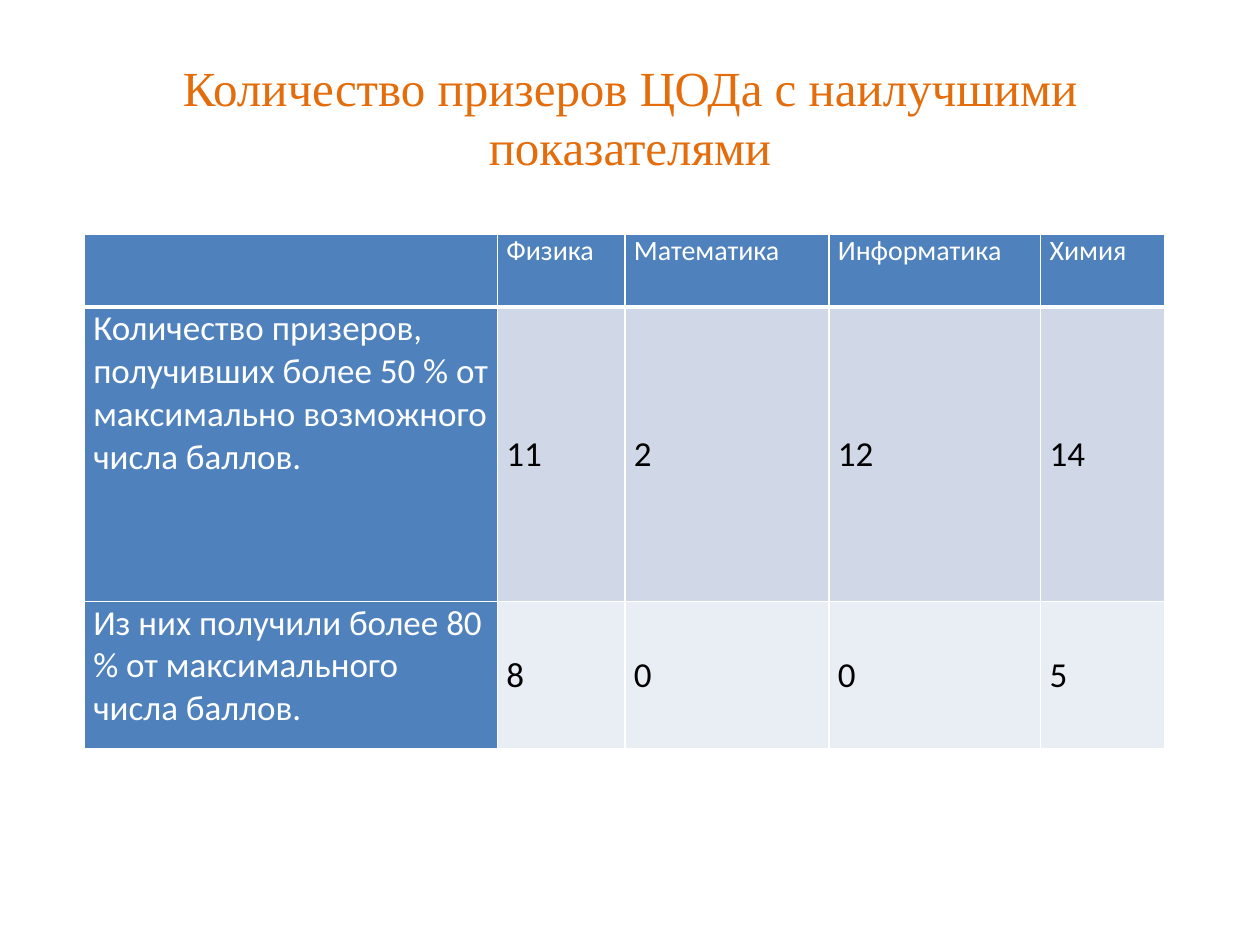
from lxml.etree import SubElement
from pptx import Presentation
from pptx.dml.color import RGBColor
from pptx.enum.text import MSO_ANCHOR as Anchor, PP_ALIGN as Align
from pptx.oxml.ns import qn
from pptx.util import Cm, Pt

ORANGE, BLUE, WHITE, BLACK = "E46C0A", "4F81BD", "FFFFFF", "000000"
BANDS = ["D0D8E8", "E9EDF4"]

COLUMN_WIDTHS = [8.33, 2.57, 4.11, 4.27, 2.51]
ROW_HEIGHTS = [1.47, 5.94, 2.97]
RESULTS = [
    ["", "Физика", "Математика", "Информатика", "Химия"],
    ["Количество призеров, получивших более 50 % от максимально "
     "возможного числа баллов.", "11", "2", "12", "14"],
    ["Из них получили более 80 % от максимального числа баллов.",
     "8", "0", "0", "5"],
]


def color(hex_code):
    return RGBColor.from_string(hex_code)


def write(frame, text, size=20, font="Calibri", fill=BLACK, align=Align.LEFT):
    paragraph = frame.paragraphs[0]
    paragraph.alignment = align
    run = paragraph.add_run()
    run.text = text
    run.font.size = Pt(size)
    run.font.name = font
    run.font.bold = False
    run.font.color.rgb = color(fill)


def add_borders(cell, **widths):
    """Draw white borders; widths are points by side: L, R, T, B."""
    properties = cell._tc.get_or_add_tcPr()
    for side, width in widths.items():
        border = SubElement(properties, qn(f"a:ln{side}"), w=str(Pt(width)))
        paint = SubElement(border, qn("a:solidFill"))
        SubElement(paint, qn("a:srgbClr"), val=WHITE)


def add_title(slide, text):
    title = slide.shapes.title
    title.left, title.top = Cm(1.27), Cm(0.76)
    title.width, title.height = Cm(22.86), Cm(3.18)
    title.text_frame.vertical_anchor = Anchor.MIDDLE
    write(title.text_frame, text, size=28, font="Times New Roman",
          fill=ORANGE, align=Align.CENTER)


def format_cell(cell, text, row, column):
    is_header, is_label = row == 0, column == 0
    # A thick rule separates the header from the body
    add_borders(cell, L=1, R=1, T=3 if row == 1 else 1,
                B=3 if is_header else 1)
    cell.fill.solid()
    on_blue = is_header or is_label
    cell.fill.fore_color.rgb = color(BLUE if on_blue else BANDS[row - 1])
    cell.margin_left = cell.margin_right = Cm(0.18)
    cell.margin_top = cell.margin_bottom = Cm(0)
    cell.vertical_anchor = Anchor.TOP if on_blue else Anchor.MIDDLE
    if text:
        write(cell.text_frame, text, size=16 if is_header else 20,
              fill=WHITE if on_blue else BLACK)


def add_results(slide, rows):
    table = slide.shapes.add_table(
        len(rows), len(rows[0]), Cm(1.7), Cm(4.72),
        Cm(sum(COLUMN_WIDTHS)), Cm(sum(ROW_HEIGHTS))).table
    table.first_col = True
    for column, width in zip(table.columns, COLUMN_WIDTHS):
        column.width = Cm(width)
    for row, height in zip(table.rows, ROW_HEIGHTS):
        row.height = Cm(height)
    for r, texts in enumerate(rows):
        for c, text in enumerate(texts):
            format_cell(table.cell(r, c), text, r, c)


def main():
    deck = Presentation()
    deck.slide_width, deck.slide_height = Cm(25.4), Cm(19.05)
    slide = deck.slides.add_slide(deck.slide_layouts[5])  # title only
    add_title(slide, "Количество призеров ЦОДа с наилучшими показателями")
    add_results(slide, RESULTS)
    deck.save("out.pptx")


if __name__ == "__main__":
    main()
